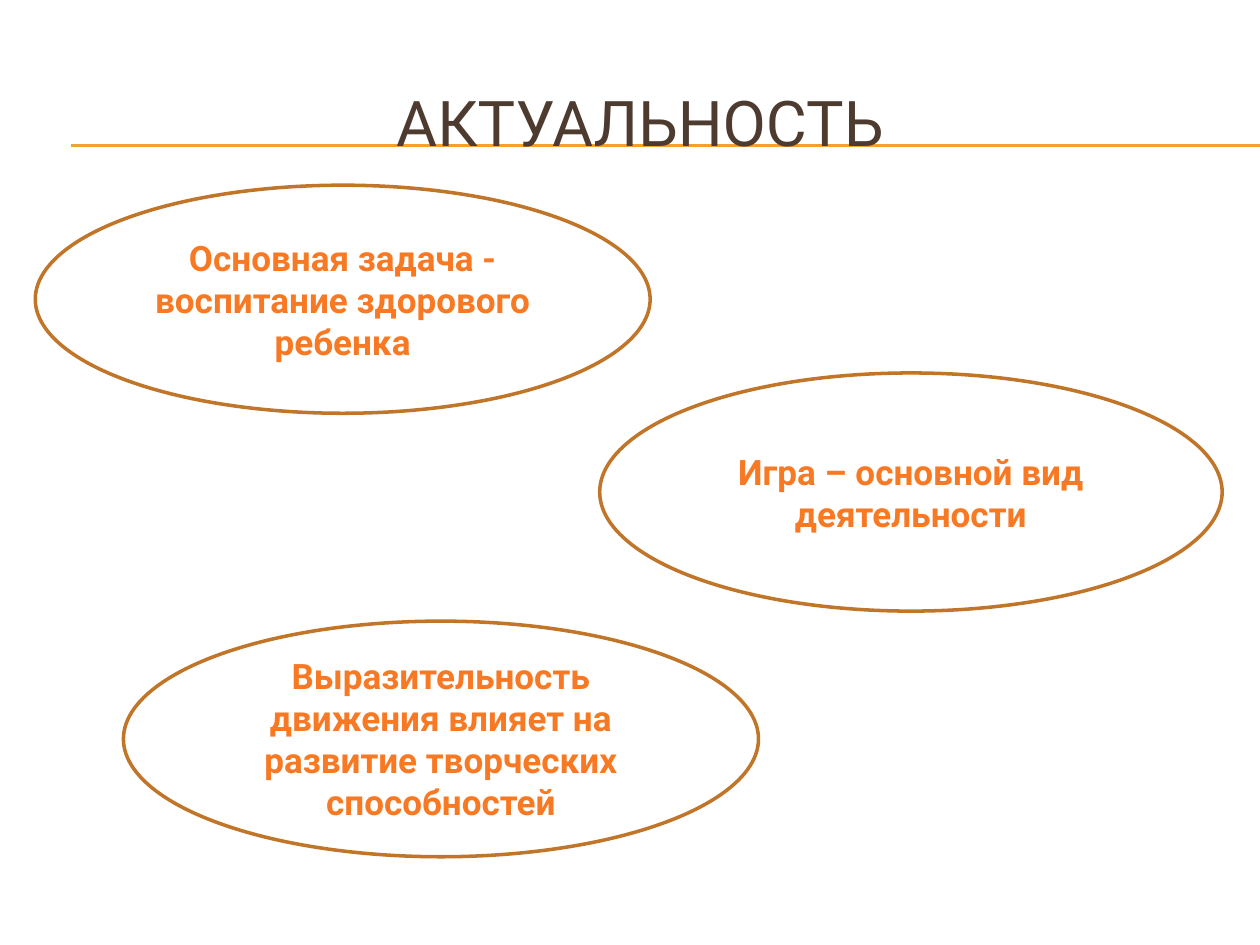
from lxml import etree
from pptx import Presentation
from pptx.dml.color import RGBColor
from pptx.enum import shapes, text
from pptx.oxml.ns import qn
from pptx.util import Inches, Pt

TITLE = "АКТУАЛЬНОСТЬ"
TITLE_BOX = (0.33, 0.5, 9.5, 0.92)
RULE_HEIGHTS = (1.15, 1.16)
RULE_LEFT, RULE_RIGHT = 0.56, 10
# statement, (left, top, width, height)
STATEMENTS = [
    ("Основная задача - воспитание здорового ребенка", (0.28, 1.47, 4.88, 1.81)),
    ("Игра – основной вид деятельности", (4.76, 2.96, 4.94, 1.89)),
    ("Выразительность движения влияет на развитие творческих способностей",
     (0.98, 4.93, 5.04, 1.87)),
]
TITLE_FONT = {"name": "Roboto", "size": Pt(36), "bold": False}
STATEMENT_FONT = {"name": "Roboto", "size": Pt(20), "bold": True}


def paint(color_format, hex_color):
    color_format.rgb = RGBColor.from_string(hex_color)


def outline(line, hex_color, width):
    paint(line.color, hex_color)
    line.width = Pt(width)


def write(shape, content, font_format, hex_color):
    """Fill a shape with one centred paragraph."""
    frame = shape.text_frame
    frame.word_wrap = True
    frame.auto_size = text.MSO_AUTO_SIZE.NONE
    frame.vertical_anchor = text.MSO_ANCHOR.MIDDLE
    paragraph = frame.paragraphs[0]
    paragraph.alignment = text.PP_ALIGN.CENTER
    run = paragraph.add_run()
    run.text = content
    for key, value in font_format.items():
        setattr(run.font, key, value)
    paint(run.font.color, hex_color)


def add_rule(slide, y):
    rule = slide.shapes.add_connector(
        shapes.MSO_CONNECTOR.STRAIGHT,
        Inches(RULE_LEFT), Inches(y), Inches(RULE_RIGHT), Inches(y))
    outline(rule.line, "F0A22E", 0.75)
    etree.SubElement(rule._element.spPr, qn("a:effectLst"))


def add_statement(slide, content, box):
    ellipse = slide.shapes.add_shape(shapes.MSO_SHAPE.OVAL, *map(Inches, box))
    ellipse.shadow.inherit = False
    ellipse.fill.solid()
    paint(ellipse.fill.fore_color, "FFFFFF")
    outline(ellipse.line, "C17529", 2)
    write(ellipse, content, STATEMENT_FONT, "F87924")


def main():
    deck = Presentation()
    deck.slide_width, deck.slide_height = Inches(10), Inches(7.5)
    slide = deck.slides.add_slide(deck.slide_layouts[5])

    for y in RULE_HEIGHTS:
        add_rule(slide, y)

    title = slide.shapes.title
    for side, length in zip(("left", "top", "width", "height"), TITLE_BOX):
        setattr(title, side, Inches(length))
    write(title, TITLE, TITLE_FONT, "4E3B30")
    slide.shapes._spTree.append(title._element)  # in front of the rules

    for content, box in STATEMENTS:
        add_statement(slide, content, box)
    deck.save("out.pptx")


if __name__ == "__main__":
    main()
